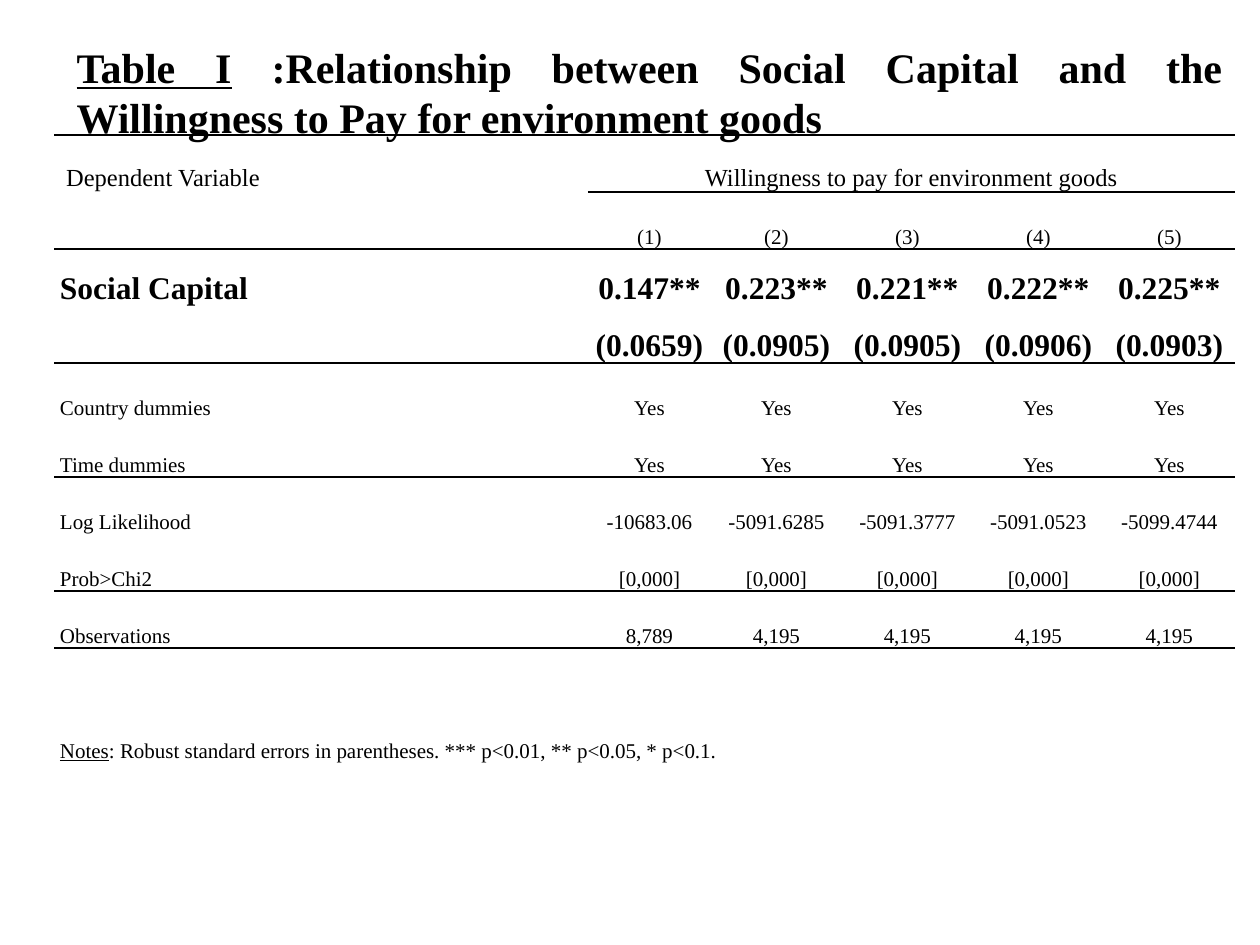
from lxml import etree
from pptx import Presentation
from pptx.dml.color import RGBColor
from pptx.enum.text import MSO_ANCHOR as Anchor, MSO_AUTO_SIZE as AutoSize, PP_ALIGN as Align
from pptx.oxml.ns import qn
from pptx.util import Emu, Pt

COLORS = {"ink": "000000"}
FONT = "Times New Roman"
NO_STYLE = "{2D5ABB26-0587-4C30-8999-92F81FD0307C}"
SIDES = {"top": "a:lnT", "bottom": "a:lnB"}

# Each row: its texts and their format
BODY, STRONG = {"size": 12}, {"size": 18, "bold": True}
ROWS = [
    (["\N{NO-BREAK SPACE}Dependent Variable".replace("\N{NO-BREAK SPACE}", " "),
      "Willingness to pay for environment goods"], {"size": 14}),
    (["", "(1)", "(2)", "(3)", "(4)", "(5)"], BODY),
    (["Social Capital", "0.147**", "0.223**", "0.221**", "0.222**", "0.225**"], STRONG),
    (["", "(0.0659)", "(0.0905)", "(0.0905)", "(0.0906)", "(0.0903)"], STRONG),
    (["Country dummies"] + ["Yes"] * 5, BODY),
    (["Time dummies"] + ["Yes"] * 5, BODY),
    (["Log Likelihood", "-10683.06", "-5091.6285", "-5091.3777", "-5091.0523", "-5099.4744"], BODY),
    (["Prob>Chi2"] + ["[0,000]"] * 5, BODY),
    (["Observations", "8,789"] + ["4,195"] * 4, BODY),
]
RULED_ROWS = {0, 1, 3, 5, 7, 8}
COLUMN_WIDTHS = [534, 123, 131, 131, 131, 131]
ROW_HEIGHT, NOTES_HEIGHT, NOTES_GAP = 57, 171, 56


def px(count):
    return Emu(round(count * 914400 / 126))


def add_text(para, text, size=12, bold=False, underline=False):
    span = para.add_run()
    span.text = text
    font = span.font
    font.name, font.size, font.bold, font.underline = FONT, Pt(size), bold, underline
    font.color.rgb = RGBColor.from_string(COLORS["ink"])


def add_border(cell, side):
    props = cell._tc.get_or_add_tcPr()
    line = etree.Element(qn(SIDES[side]), w=str(Pt(1)))
    fill = etree.SubElement(line, qn("a:solidFill"))
    etree.SubElement(fill, qn("a:srgbClr"), val=COLORS["ink"])
    # Lines come before the cell fill
    props.insert(len(props) - 1, line)


def add_title(page, left, top, width, height):
    title = page.shapes.title
    title.left, title.top, title.width, title.height = map(px, (left, top, width, height))
    frame = title.text_frame
    frame.word_wrap, frame.auto_size = True, AutoSize.NONE
    frame.vertical_anchor = Anchor.MIDDLE
    para = frame.paragraphs[0]
    para.alignment = Align.JUSTIFY
    add_text(para, "Table I", size=24, bold=True, underline=True)
    add_text(para, " :Relationship between Social Capital and the Willingness to Pay"
             " for environment goods", size=24, bold=True)


def format_cell(cell, align=Align.LEFT, gap=0):
    cell.fill.background()
    cell.vertical_anchor = Anchor.BOTTOM
    cell.margin_left = cell.margin_right = px(6)
    cell.margin_top, cell.margin_bottom = 0, px(gap)
    para = cell.text_frame.paragraphs[0]
    para.alignment, para.line_spacing = align, 1.15
    return para


def add_results(page, left, top):
    height = ROW_HEIGHT * len(ROWS) + NOTES_HEIGHT
    frame = page.shapes.add_table(len(ROWS) + 1, len(COLUMN_WIDTHS), px(left), px(top),
                                  px(sum(COLUMN_WIDTHS)), px(height))
    table = frame.table
    table.first_row = table.horz_banding = False
    table._tbl.tblPr.find(qn("a:tableStyleId")).text = NO_STYLE
    for column, width in zip(table.columns, COLUMN_WIDTHS):
        column.width = px(width)
    for row in table.rows:
        row.height = px(ROW_HEIGHT)
    notes_row = len(ROWS)
    table.rows[notes_row].height = px(NOTES_HEIGHT)
    last = len(COLUMN_WIDTHS) - 1
    table.cell(0, 1).merge(table.cell(0, last))
    table.cell(notes_row, 0).merge(table.cell(notes_row, last))

    # Labels, values and rules
    for r, (texts, style) in enumerate(ROWS):
        for c in range(last + 1):
            cell = table.cell(r, c)
            para = format_cell(cell, Align.CENTER if c else Align.LEFT)
            if c < len(texts) and texts[c]:
                add_text(para, texts[c], **style)
            if r == 0:
                add_border(cell, "top")
            if r in RULED_ROWS and (r, c) != (0, 0):
                add_border(cell, "bottom")

    # Notes
    para = format_cell(table.cell(notes_row, 0), gap=NOTES_GAP)
    add_text(para, "Notes", underline=True)
    add_text(para, ": Robust standard errors in parentheses. *** p<0.01, ** p<0.05, * p<0.1.")


def main():
    deck = Presentation()
    deck.slide_width, deck.slide_height = px(1260), px(945)
    page = deck.slides.add_slide(deck.slide_layouts[5])
    add_title(page, 64, 34, 1171, 115)
    add_results(page, 54, 135)
    deck.save("out.pptx")


if __name__ == "__main__":
    main()
